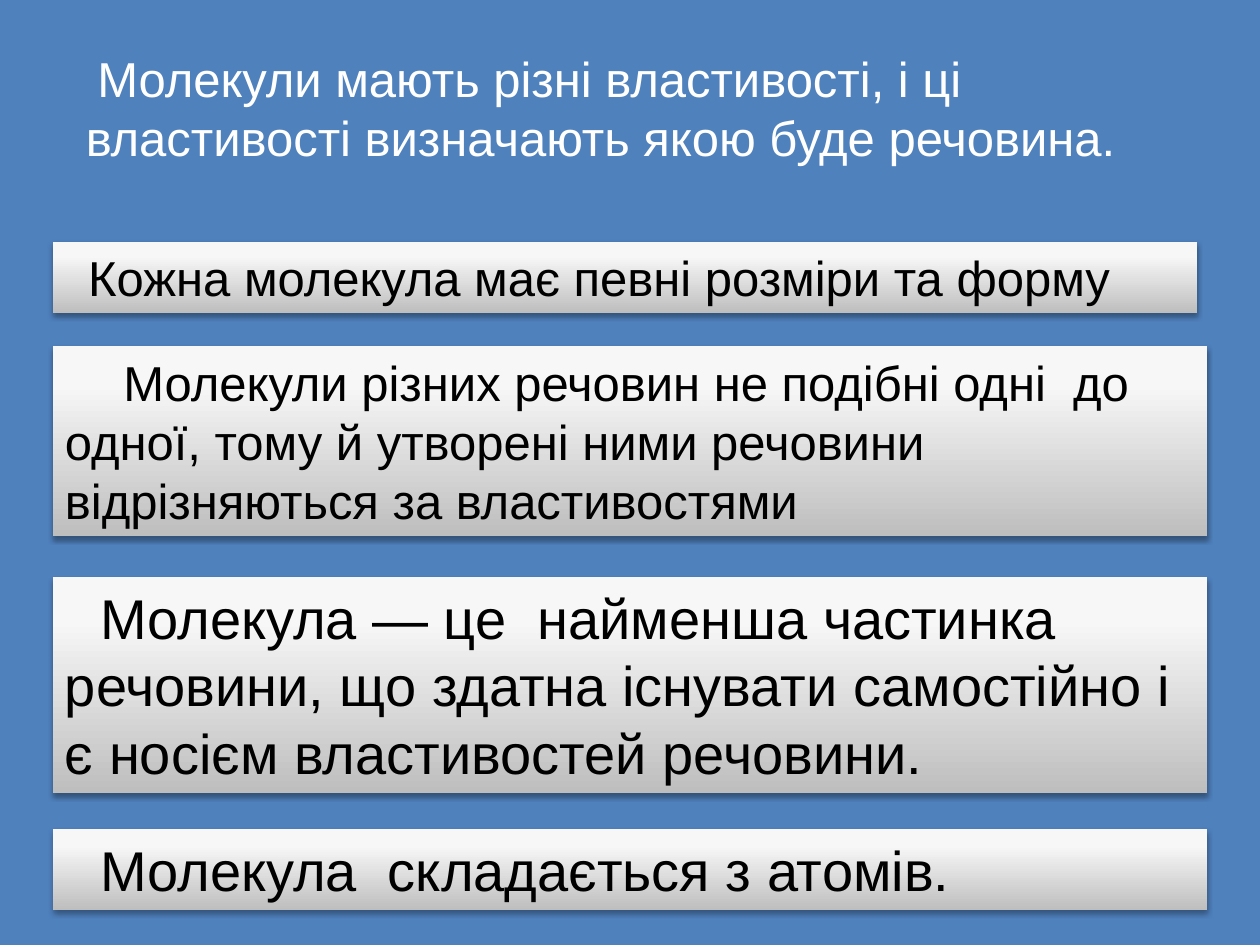
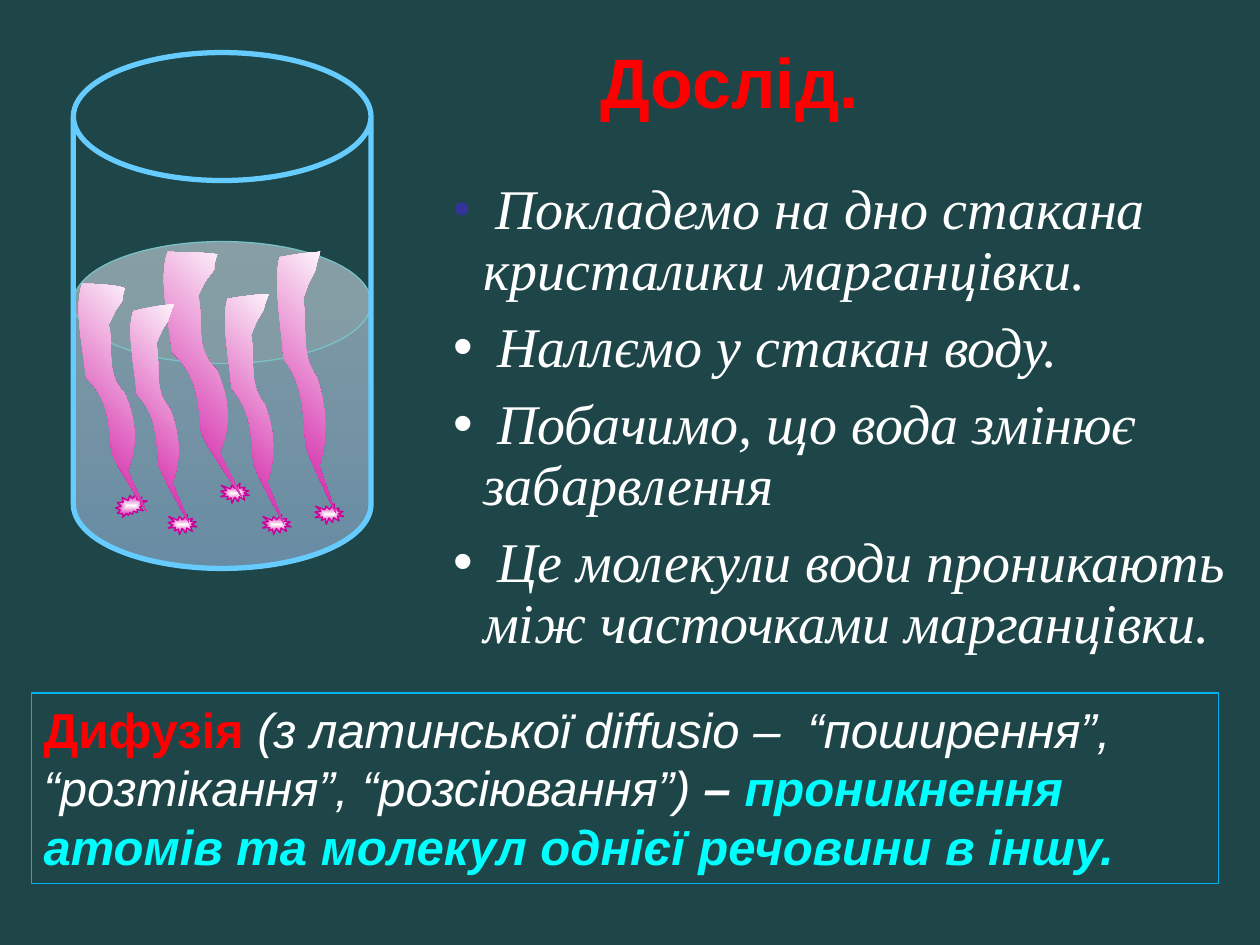
"""Build two slides on molecules and the diffusion experiment."""
from lxml.etree import SubElement
from pptx import Presentation
from pptx.dml.color import RGBColor
from pptx.enum.shapes import MSO_SHAPE as Preset
from pptx.enum.text import MSO_ANCHOR as Anchor, MSO_AUTO_SIZE as AutoSize, PP_ALIGN as Align
from pptx.oxml.ns import qn
from pptx.util import Cm, Pt

BLUE = RGBColor(0x4F, 0x81, 0xBD)
TEAL = RGBColor(0x1E, 0x46, 0x49)
WHITE = RGBColor(0xFF, 0xFF, 0xFF)
BLACK = RGBColor(0x00, 0x00, 0x00)
RED = RGBColor(0xFF, 0x00, 0x00)
CYAN = RGBColor(0x00, 0xFF, 0xFF)
INDIGO = RGBColor(0x33, 0x33, 0x99)
MAGENTA = RGBColor(0xCC, 0x00, 0x99)
GLASS_BLUE = RGBColor(0x66, 0xCC, 0xFF)
WATER_EDGE = RGBColor(0x77, 0xC1, 0xC7)
WATER_TOP = RGBColor(0xE7, 0xF1, 0xFF)
WATER_BOTTOM = RGBColor(0xB3, 0xD2, 0xFF)
FRAME_BLUE = RGBColor(0x00, 0xB0, 0xF0)
GREY = RGBColor(0xBE, 0xBE, 0xBE)
PALE = RGBColor(0xF7, 0xF7, 0xF7)
PALEST = RGBColor(0xF8, 0xF8, 0xF8)


def paint_gradient(shape, stops, angle=None, opacity=100):
    """Fill a shape along an angle, or outward from its centre if there is none."""
    shape.shadow.inherit = False
    shape.fill.gradient()
    gradient = shape._element.spPr.find(qn("a:gradFill"))
    for child in list(gradient):
        gradient.remove(child)
    stop_list = SubElement(gradient, qn("a:gsLst"))
    for position, color in stops:
        stop = SubElement(stop_list, qn("a:gs"), pos=str(position * 1000))
        tone = SubElement(stop, qn("a:srgbClr"), val=str(color))
        if opacity < 100:
            SubElement(tone, qn("a:alpha"), val=str(opacity * 1000))
    if angle is None:
        center = SubElement(gradient, qn("a:path"), path="shape")
        SubElement(center, qn("a:fillToRect"), l="50000", t="50000", r="50000", b="50000")
    else:
        SubElement(gradient, qn("a:lin"), ang=str(angle * 60000), scaled="1")


def write_text(box, paragraphs, before=50, spacing=None, indent=0, margin=0, bullet=None, wrap=True):
    """Write paragraphs given as lists of (text, colour, font values)."""
    frame = box.text_frame
    layout = {"word_wrap": wrap, "vertical_anchor": Anchor.TOP, "auto_size": AutoSize.SHAPE_TO_FIT_TEXT}
    for name, value in layout.items():
        setattr(frame, name, value)
    for number, spans in enumerate(paragraphs):
        para = frame.add_paragraph() if number else frame.paragraphs[0]
        para.alignment = Align.LEFT
        if spacing:
            para.line_spacing = spacing
        settings = para._p.get_or_add_pPr()
        settings.set("marL", str(Cm(margin)))
        settings.set("indent", str(Cm(indent)))
        gap = SubElement(settings, qn("a:spcBef"))
        SubElement(gap, qn("a:spcPct"), val=str(before * 1000))
        if bullet:
            SubElement(settings, qn("a:buFont"), typeface="Arial")
            SubElement(settings, qn("a:buChar"), char=bullet)
        for text, color, values in spans:
            span = para.add_run()
            span.text = text
            span.font.color.rgb = color
            for name, value in values.items():
                setattr(span.font, name, value)


deck = Presentation()
deck.slide_width, deck.slide_height = Cm(25.4), Cm(19.05)
pages = []
for color in (BLUE, TEAL):
    page = deck.slides.add_slide(deck.slide_layouts[6])
    page.background.fill.solid()
    page.background.fill.fore_color.rgb = color
    pages.append(page)
properties_page, experiment_page = pages

body = {"name": "Arial", "size": Pt(28)}
large = {"name": "Arial", "size": Pt(32)}

heading = properties_page.shapes.add_textbox(Cm(1.48), Cm(0.85), Cm(22.86), Cm(2.62))
write_text(heading, [[
    (" ", WHITE, {**body, "size": Pt(24)}),
    ("Молекули мають різні властивості, і ці властивості визначають якою буде речовина.", WHITE, body),
]])

panels = [
    (4.87, 23.07, 1.45, 0.47, body, "Кожна молекула має певні розміри та форму"),
    (6.98, 23.28, 3.82, 1.18, body, "Молекули різних речовин не подібні одні  до одної, "
     "тому й утворені ними речовини відрізняються за властивостями"),
    (11.64, 23.28, 4.35, 0.71, large, "Молекула ― це  найменша частинка речовини, "
     "що здатна існувати самостійно і є носієм властивостей речовини."),
    (16.72, 23.28, 1.63, 0.71, large, "Молекула  складається з атомів."),
]
for top, width, height, indent, values, text in panels:
    panel = properties_page.shapes.add_shape(Preset.RECTANGLE, Cm(1.06), Cm(top), Cm(width), Cm(height))
    paint_gradient(panel, [(0, GREY), (80, PALE), (100, PALEST)], 270)
    panel.line.fill.background()
    effects = panel._element.spPr.find(qn("a:effectLst"))
    shadow = SubElement(effects, qn("a:outerShdw"), blurRad=str(Pt(3.1)), dist=str(Pt(1.8)),
                        dir="5400000", rotWithShape="0")
    shade = SubElement(shadow, qn("a:srgbClr"), val=str(BLACK))
    SubElement(shade, qn("a:alpha"), val="35000")
    write_text(panel, [[(text, BLACK, values)]], indent=indent)

shapes = experiment_page.shapes
water = shapes.add_shape(Preset.CAN, Cm(1.48), Cm(4.87), Cm(6), Cm(6.6))
water.adjustments[0] = 0.41
paint_gradient(water, [(0, WATER_TOP), (100, WATER_BOTTOM)], 90, opacity=50)
water.line.color.rgb = WATER_EDGE
water.line.width = Pt(0.75)

crystals = [
    (Preset.EXPLOSION2, 2.33, 9.95, 0.64, 0.48),
    (Preset.EXPLOSION1, 4.45, 9.74, 0.58, 0.41),
    (Preset.EXPLOSION1, 5.29, 10.37, 0.58, 0.41),
    (Preset.EXPLOSION1, 3.39, 10.37, 0.58, 0.41),
    (Preset.EXPLOSION1, 6.35, 10.16, 0.58, 0.41),
]
for preset, left, top, width, height in crystals:
    crystal = shapes.add_shape(preset, Cm(left), Cm(top), Cm(width), Cm(height))
    paint_gradient(crystal, [(0, WHITE), (100, MAGENTA)])
    crystal.line.color.rgb = MAGENTA
    crystal.line.width = Pt(0.75)

streams = [
    (1.48, 5.72, 1.48, 4.6, (12, 0), (70, 2)),
    (3.18, 5.08, 1.69, 4.93, (12, 0), (71, 1)),
    (4.45, 5.93, 1.27, 4.62, (11, 2), (76, 0)),
    (2.54, 6.14, 1.27, 4.39, (12, 3), (76, 0)),
    (5.5, 5.08, 1.27, 5.26, (11, 2), (75, 0)),
]
for left, top, width, height, left_corner, right_corner in streams:
    curve_points = [
        (87, 94), (74, 87), (61, 80),
        (58, 78), (52, 74), (52, 74),
        (48, 61), (49, 51), (17, 41),
        (15, 31), (0, 11), left_corner,
        left_corner, (54, 0), right_corner,
        (61, 11), (76, 3), (57, 12),
        (54, 14), (48, 18), (48, 18),
        (56, 28), (42, 39), (70, 48),
        (86, 60), (88, 71), (74, 82),
    ]
    builder = shapes.build_freeform(Cm(left + width), Cm(top + height))
    builder.add_line_segments([(Cm(left + width * x / 100), Cm(top + height * y / 100))
                               for x, y in curve_points], close=True)
    stream = builder.convert_to_shape()
    outline = stream._element.spPr.find(".//" + qn("a:path"))
    close = outline.find(qn("a:close"))
    segments = outline.findall(qn("a:lnTo"))
    for number, segment in enumerate(segments):
        if number % 3 == 0:
            curve = SubElement(outline, qn("a:cubicBezTo"))
        curve.append(segment[0])
        outline.remove(segment)
    outline.append(close)
    paint_gradient(stream, [(0, MAGENTA), (100, WHITE)], 315)
    stream.line.fill.background()

glass = shapes.add_shape(Preset.CAN, Cm(1.48), Cm(1.06), Cm(6), Cm(10.4))
glass.adjustments[0] = 0.43
glass.shadow.inherit = False
glass.fill.background()
glass.line.color.rgb = GLASS_BLUE
glass.line.width = Pt(3)

italic = {"name": "Times New Roman", "size": Pt(32), "italic": True}
steps = [[(" " + text, WHITE, italic)] for text in (
    "Наллємо у стакан воду.",
    "Побачимо, що вода змінює забарвлення",
    "Це молекули води проникають між часточками марганцівки.",
)]
first_step = [(" ", INDIGO, {**italic, "size": Pt(28)}),
              ("Покладемо на дно стакана кристалики марганцівки.", WHITE, italic)]
step_list = shapes.add_textbox(Cm(8.89), Cm(3.53), Cm(16.51), Cm(10.11))
write_text(step_list, [first_step] + steps, before=30, spacing=0.9, indent=-0.6, margin=0.6, bullet="•")

title = shapes.add_textbox(Cm(11.85), Cm(0.85), Cm(5.77), Cm(1.8))
write_text(title, [[("Дослід.", RED, {"name": "Arial", "size": Pt(40), "bold": True})]],
           before=30, spacing=0.9, wrap=False)

definition = shapes.add_shape(Preset.RECTANGLE, Cm(0.63), Cm(13.97), Cm(23.93), Cm(3.84))
definition.shadow.inherit = False
definition.fill.background()
definition.line.color.rgb = FRAME_BLUE
definition.line.width = Pt(0.75)
strong = {**body, "bold": True, "italic": True}
write_text(definition, [[
    ("Дифузія ", RED, {**body, "bold": True}),
    ("(з латинської diffusio –  “поширення”, “розтікання”, “розсіювання”)", WHITE, {**body, "italic": True}),
    (" – ", WHITE, strong),
    ("проникнення атомів та молекул однієї речовини в іншу.", CYAN, strong),
]])

deck.save("out.pptx")
